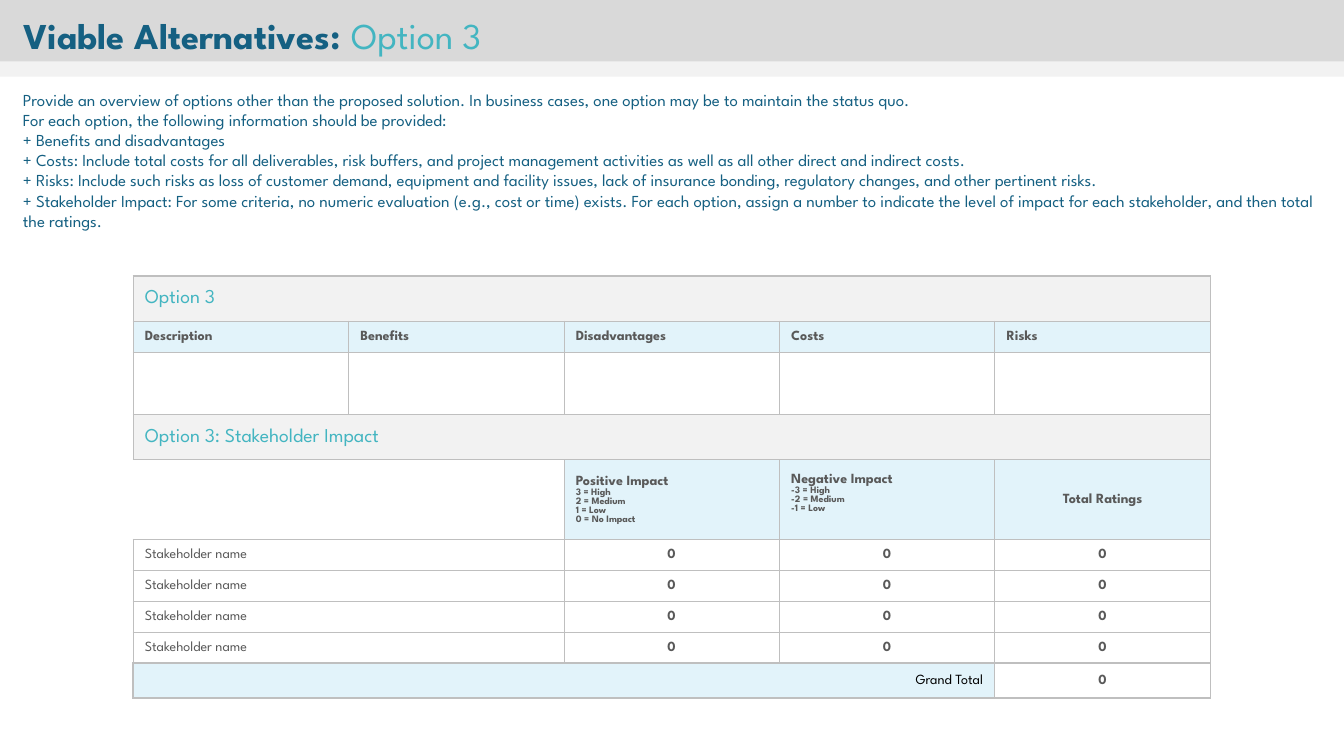
"""Build the Viable Alternatives: Option 3 slide."""
from lxml import etree
from pptx import Presentation
from pptx.dml.color import RGBColor
from pptx.enum.shapes import MSO_SHAPE
from pptx.enum.text import MSO_ANCHOR, MSO_AUTO_SIZE, PP_ALIGN
from pptx.oxml.ns import qn
from pptx.util import Cm, Pt

RECTANGLE = MSO_SHAPE.RECTANGLE
MIDDLE, TOP = MSO_ANCHOR.MIDDLE, MSO_ANCHOR.TOP
GROW = MSO_AUTO_SIZE.SHAPE_TO_FIT_TEXT
LEFT, CENTER, RIGHT = PP_ALIGN.LEFT, PP_ALIGN.CENTER, PP_ALIGN.RIGHT

FONT = "League Spartan"
NAVY = RGBColor(0x15, 0x60, 0x82)
TEAL = RGBColor(0x43, 0xB5, 0xC1)
DARK_GRAY = RGBColor(0x59, 0x59, 0x59)
BORDER_GRAY = RGBColor(0xBF, 0xBF, 0xBF)
BAND_GRAY = RGBColor(0xD9, 0xD9, 0xD9)
LIGHT_GRAY = RGBColor(0xF2, 0xF2, 0xF2)
LIGHT_BLUE = RGBColor(0xE2, 0xF3, 0xFA)
WHITE = RGBColor(0xFF, 0xFF, 0xFF)
BLACK = RGBColor(0, 0, 0)


def add_text(paragraph, text, size=10, color=DARK_GRAY, bold=False, align=LEFT):
    paragraph.alignment = align
    run = paragraph.add_run()
    run.text = text
    run.font.name = FONT
    run.font.size = Pt(size)
    run.font.bold = bold
    run.font.color.rgb = color


def set_border(cell, side, width):
    properties = cell._tc.get_or_add_tcPr()
    line = etree.SubElement(properties, qn(f"a:ln{side}"), w=str(Pt(width)))
    if width:
        fill = etree.SubElement(line, qn("a:solidFill"))
        etree.SubElement(fill, qn("a:srgbClr"), val=str(BORDER_GRAY))
    else:
        etree.SubElement(line, qn("a:noFill"))


presentation = Presentation()
presentation.slide_width, presentation.slide_height = Cm(33.87), Cm(19.05)
slide = presentation.slides.add_slide(presentation.slide_layouts[5])

title = slide.shapes.title
for top, height, color in ((0, 1.57, BAND_GRAY), (1.55, 0.38, LIGHT_GRAY)):
    band = slide.shapes.add_shape(RECTANGLE, 0, Cm(top), presentation.slide_width, Cm(height))
    band.shadow.inherit = False
    band.fill.solid()
    band.fill.fore_color.rgb = color
    band.line.fill.background()
    title.element.addprevious(band.element)

title.left, title.top, title.width, title.height = Cm(0.33), Cm(0.2), Cm(27.33), Cm(1.37)
title.text_frame.vertical_anchor = TOP
title.text_frame.auto_size = GROW
add_text(title.text_frame.paragraphs[0], "Viable Alternatives: ", size=26, color=NAVY, bold=True)
add_text(title.text_frame.paragraphs[0], "Option 3", size=26, color=TEAL)

INSTRUCTIONS = (
    "Provide an overview of options other than the proposed solution. In business cases, "
    "one option may be to maintain the status quo.",
    "For each option, the following information should be provided:",
    "+ Benefits and disadvantages",
    "+ Costs: Include total costs for all deliverables, risk buffers, and project management "
    "activities as well as all other direct and indirect costs.",
    "+ Risks: Include such risks as loss of customer demand, equipment and facility issues, "
    "lack of insurance bonding, regulatory changes, and other pertinent risks.",
    "+ Stakeholder Impact: For some criteria, no numeric evaluation (e.g., cost or time) exists. "
    "For each option, assign a number to indicate the level of impact for each stakeholder, "
    "and then total the ratings.",
)
instructions = slide.shapes.add_textbox(Cm(0.33), Cm(2.13), Cm(33.22), Cm(3.84)).text_frame
instructions.word_wrap = True
instructions.auto_size = GROW
for index, text in enumerate(INSTRUCTIONS):
    paragraph = instructions.add_paragraph() if index else instructions.paragraphs[0]
    add_text(paragraph, text, size=12, color=NAVY)

HEADING = dict(size=14, color=TEAL)
LABEL = dict(bold=True)
NUMBER = dict(bold=True, align=CENTER)
TOTAL = dict(color=BLACK, align=RIGHT)
STAKEHOLDER = [("Stakeholder name", 2, WHITE, {})] + [("0", 1, WHITE, NUMBER)] * 3
ROWS = (
    (1.13, [("Option 3", 5, LIGHT_GRAY, HEADING)]),
    (0.78, [(name, 1, LIGHT_BLUE, LABEL)
            for name in ("Description", "Benefits", "Disadvantages", "Costs", "Risks")]),
    (1.58, [("", 1, WHITE, {})] * 5),
    (1.13, [("Option 3: Stakeholder Impact", 5, LIGHT_GRAY, HEADING)]),
    (2.01, [("", 2, None, {}),
            ("Positive Impact\n3 = High\n2 = Medium\n1 = Low\n0 = No Impact", 1, LIGHT_BLUE, LABEL),
            ("Negative Impact\n-3 = High\n-2 = Medium\n-1 = Low", 1, LIGHT_BLUE, LABEL),
            ("Total Ratings", 1, LIGHT_BLUE, NUMBER)]),
    *[(0.78, STAKEHOLDER)] * 4,
    (0.88, [("Grand Total", 4, LIGHT_BLUE, TOTAL), ("0", 1, WHITE, NUMBER)]),
)
COLUMN_COUNT, COLUMN_WIDTH = 5, 5.43
LAST_ROW = len(ROWS) - 1

table = slide.shapes.add_table(len(ROWS), COLUMN_COUNT, Cm(3.35), Cm(6.96),
                               Cm(COLUMN_COUNT * COLUMN_WIDTH), Cm(10.62)).table
table.first_row = table.horz_banding = False
for column in table.columns:
    column.width = Cm(COLUMN_WIDTH)

for row_index, (height, row_cells) in enumerate(ROWS):
    table.rows[row_index].height = Cm(height)
    column_index = 0
    for text, span, fill, text_format in row_cells:
        cell = table.cell(row_index, column_index)
        if span > 1:
            cell.merge(table.cell(row_index, column_index + span - 1))
        column_index += span

        align = text_format.get("align", LEFT)
        cell.vertical_anchor = MIDDLE
        cell.margin_left = Cm(0.3 if align == LEFT else 0.03)
        cell.margin_right = Cm(0.3 if align == RIGHT else 0.03)
        cell.margin_top = Cm(0.03)
        cell.margin_bottom = Cm(0.33 if text.startswith("Negative") else 0)

        width = 1 if row_index == LAST_ROW else 0.5
        set_border(cell, "L", width if fill else 0)
        set_border(cell, "R", width)
        set_border(cell, "T", 1.5 if row_index == 0 else width)
        set_border(cell, "B", 1 if row_index >= LAST_ROW - 1 else width)
        if fill:
            cell.fill.solid()
            cell.fill.fore_color.rgb = fill
        else:
            cell.fill.background()

        for line_index, line in enumerate(text.splitlines()):
            frame = cell.text_frame
            paragraph = frame.add_paragraph() if line_index else frame.paragraphs[0]
            add_text(paragraph, line, **(text_format | {"size": 7} if line_index else text_format))

presentation.save("out.pptx")
